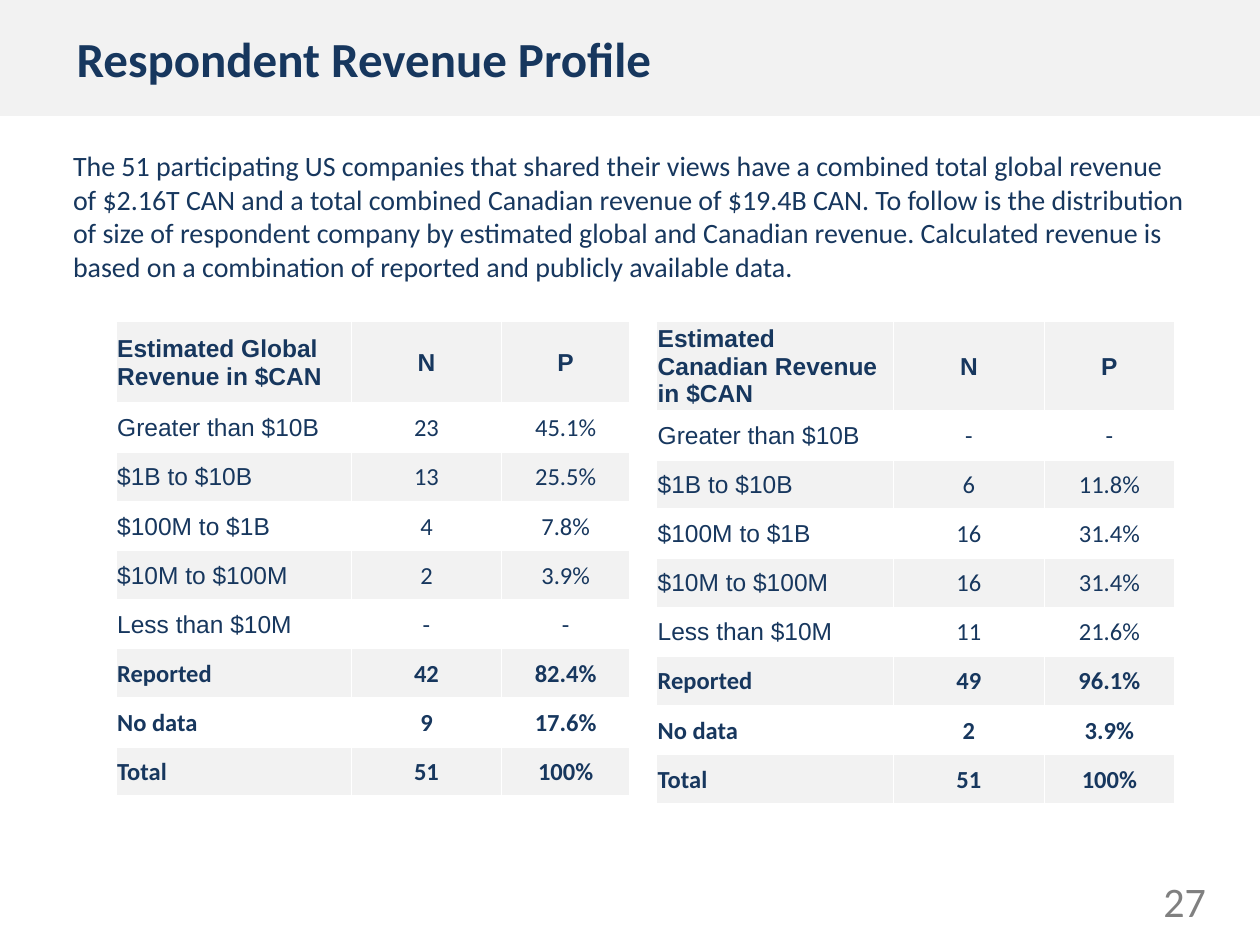
from lxml import etree
from pptx import Presentation
from pptx.dml.color import RGBColor
from pptx.enum import shapes, text
from pptx.oxml import ns
from pptx.util import Inches, Pt

NAVY = RGBColor(0x17, 0x37, 0x5E)
GREY = RGBColor(0x80, 0x80, 0x80)
PALE = RGBColor(0xF2, 0xF2, 0xF2)
WHITE = RGBColor(0xFF, 0xFF, 0xFF)

INTRO = (
    "The 51 participating US companies that shared their views have a combined "
    "total global revenue of $2.16T CAN and a total combined Canadian revenue of "
    "$19.4B CAN. To follow is the distribution of size of respondent company by "
    "estimated global and Canadian revenue. Calculated revenue is based on a "
    "combination of reported and publicly available data."
)
BRACKETS = ["Greater than $10B", "$1B to $10B", "$100M to $1B", "$10M to $100M",
            "Less than $10M"]
SUMMARIES = ["Reported", "No data", "Total"]
GLOBAL_FIGURES = [("23", "45.1%"), ("13", "25.5%"), ("4", "7.8%"), ("2", "3.9%"),
                  ("-", "-"), ("42", "82.4%"), ("9", "17.6%"), ("51", "100%")]
CANADIAN_FIGURES = [("-", "-"), ("6", "11.8%"), ("16", "31.4%"), ("16", "31.4%"),
                    ("11", "21.6%"), ("49", "96.1%"), ("2", "3.9%"), ("51", "100%")]


def write(frame, words, size, color=NAVY, font="Calibri", bold=False,
          align=text.PP_ALIGN.LEFT):
    paragraph = frame.paragraphs[0]
    paragraph.alignment = align
    run = paragraph.add_run()
    run.text = words
    run.font.size = Pt(size)
    run.font.name = font
    run.font.bold = bold
    run.font.color.rgb = color


def add_header_band(slide):
    band = slide.shapes.add_shape(shapes.MSO_SHAPE.RECTANGLE, 0, 0,
                                  Inches(10), Inches(0.92))
    band.shadow.inherit = False
    band.fill.solid()
    band.fill.fore_color.rgb = PALE
    band.line.fill.background()


def add_text(slide, left, top, width, height, words, size,
             anchor=text.MSO_ANCHOR.MIDDLE, inset=0.1, **style):
    frame = slide.shapes.add_textbox(Inches(left), Inches(top),
                                     Inches(width), Inches(height)).text_frame
    frame.word_wrap = True
    frame.vertical_anchor = anchor
    frame.margin_left = frame.margin_right = Inches(inset)
    frame.margin_top = frame.margin_bottom = Inches(0.04)
    write(frame, words, size, **style)


def set_borders(cell):
    properties = cell._tc.get_or_add_tcPr()
    for side in ("a:lnL", "a:lnR", "a:lnT", "a:lnB"):
        border = etree.SubElement(properties, ns.qn(side), w=str(Pt(1)))
        fill = etree.SubElement(border, ns.qn("a:solidFill"))
        etree.SubElement(fill, ns.qn("a:srgbClr"), val=str(WHITE))


def fill_cell(cell, words, shaded, **style):
    cell.margin_left = cell.margin_right = cell.margin_top = Inches(0.01)
    cell.margin_bottom = 0
    cell.vertical_anchor = text.MSO_ANCHOR.MIDDLE
    set_borders(cell)
    if shaded:
        cell.fill.solid()
        cell.fill.fore_color.rgb = PALE
    else:
        cell.fill.background()
    write(cell.text_frame, words, 14, **style)


def add_revenue_table(slide, left, column_widths, heading, figures):
    labels = BRACKETS + SUMMARIES
    rows = [(heading, "N", "P")]
    rows += [(label, *pair) for label, pair in zip(labels, figures)]
    heights = [0.65] + [0.39] * len(labels)
    table = slide.shapes.add_table(
        len(rows), len(column_widths), Inches(left), Inches(2.55),
        Inches(sum(column_widths)), Inches(sum(heights))).table
    table.first_row = table.horz_banding = False
    for column, width in zip(table.columns, column_widths):
        column.width = Inches(width)
    for r, (values, height) in enumerate(zip(rows, heights)):
        table.rows[r].height = Inches(height)
        is_summary = values[0] in SUMMARIES
        for c, value in enumerate(values):
            in_arial = r == 0 or (c == 0 and not is_summary)
            fill_cell(table.cell(r, c), value, shaded=r % 2 == 0,
                      font="Arial" if in_arial else "Calibri",
                      bold=r == 0 or is_summary,
                      align=text.PP_ALIGN.CENTER if c else text.PP_ALIGN.LEFT)


def main():
    deck = Presentation()
    deck.slide_width, deck.slide_height = Inches(10), Inches(7.5)
    slide = deck.slides.add_slide(deck.slide_layouts[6])
    add_header_band(slide)
    add_text(slide, 0.51, 0, 5.81, 0.92, "Respondent Revenue Profile", 28, bold=True)
    add_text(slide, 9, 6.95, 0.67, 0.4, "27", 24, color=GREY,
             align=text.PP_ALIGN.RIGHT)
    add_text(slide, 0.51, 1.14, 8.99, 1.79, INTRO, 16,
             anchor=text.MSO_ANCHOR.TOP, inset=0.07)
    add_revenue_table(slide, 0.92, (1.87, 1.19, 1.02),
                      "Estimated Global Revenue in $CAN", GLOBAL_FIGURES)
    add_revenue_table(slide, 5.21, (1.88, 1.2, 1.03),
                      "Estimated Canadian Revenue in $CAN", CANADIAN_FIGURES)
    deck.save("out.pptx")


if __name__ == "__main__":
    main()
